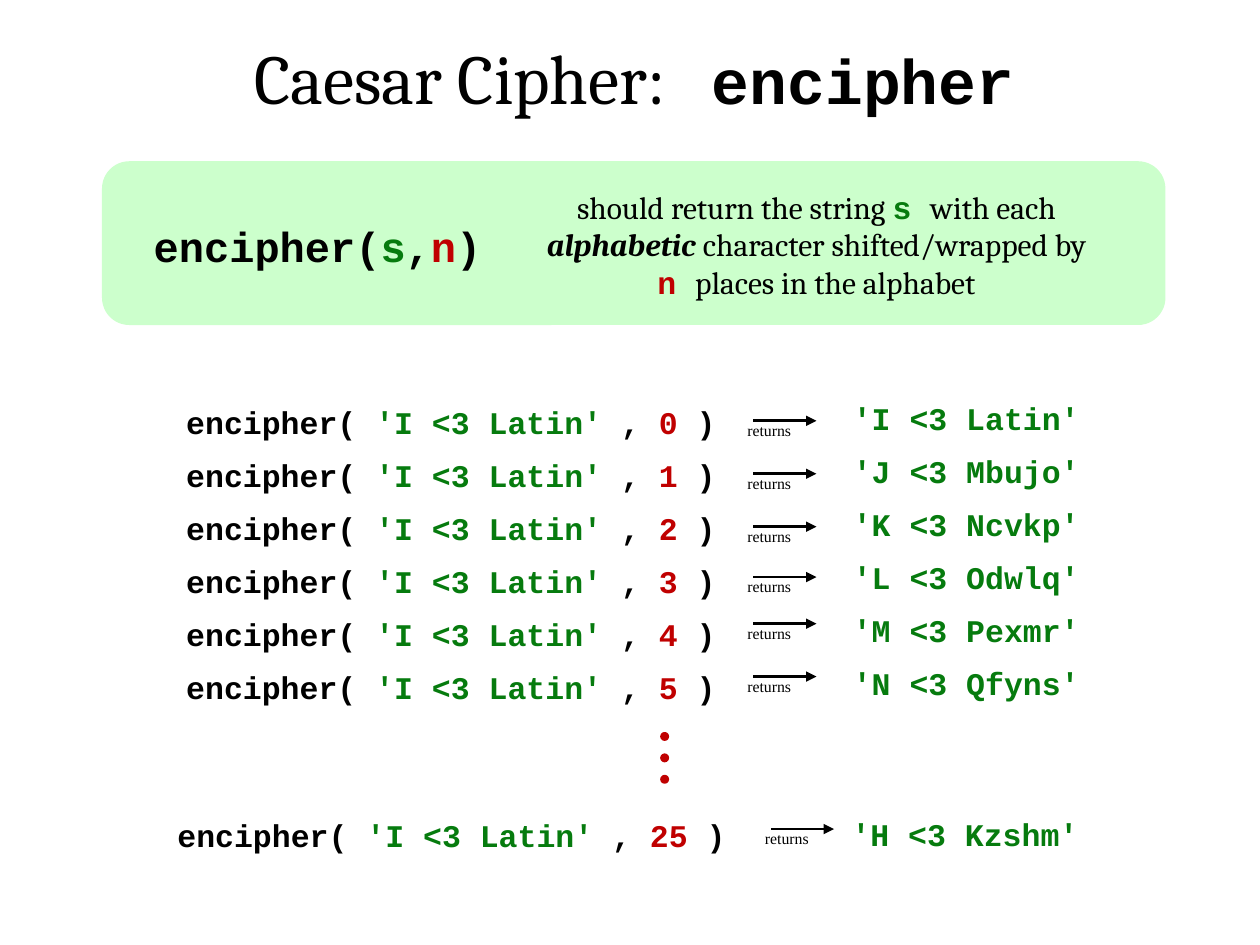
"""Build the slide that explains the Caesar cipher function encipher."""
import pptx
import pptx.dml.color
import pptx.enum.shapes
import pptx.enum.text
import pptx.oxml
import pptx.oxml.ns
import pptx.util

Inches = pptx.util.Inches
Pt = pptx.util.Pt
SHAPES = pptx.enum.shapes.MSO_SHAPE
CENTER = pptx.enum.text.PP_ALIGN.CENTER

BLACK, GREEN, RED, MINT = "000000", "067B0E", "C00000", "CCFFCC"
SERIF, MONO, ROMAN = "Cambria", "Courier New", "Times New Roman"


def color(value):
    """Return the RGB color for a hex string."""
    return pptx.dml.color.RGBColor.from_string(value)


def add_span(para, text, size=18, font=MONO, fill=BLACK, bold=False, italic=False):
    """Append one formatted span of text to a paragraph."""
    span = para.add_run()
    span.text = text
    span.font.name = font
    span.font.size = Pt(size)
    span.font.bold = bold
    span.font.italic = italic
    span.font.color.rgb = color(fill)


def add_text(shapes, box, paragraphs, align=None, spacing=None):
    """Add a text box whose paragraphs are lists of (text, format) pairs."""
    frame = shapes.add_textbox(*map(Inches, box)).text_frame
    frame.word_wrap = True
    frame.auto_size = pptx.enum.text.MSO_AUTO_SIZE.SHAPE_TO_FIT_TEXT
    for index, spans in enumerate(paragraphs):
        para = frame.add_paragraph() if index else frame.paragraphs[0]
        para.alignment = align
        para.line_spacing = spacing
        for text, style in spans:
            add_span(para, text, **style)


def add_solid(shapes, kind, box, fill):
    """Add a plain filled shape without outline or shadow."""
    shape = shapes.add_shape(kind, *map(Inches, box))
    shape.shadow.inherit = False
    shape.fill.solid()
    shape.fill.fore_color.rgb = color(fill)
    shape.line.fill.background()
    return shape


def add_title(shapes, box):
    """Add the slide title."""
    add_text(shapes, box, [[
        ("Caesar Cipher:", dict(size=40, font=SERIF)),
        (" ", dict(size=44)),
        ("encipher", dict(size=36, bold=True)),
    ]], align=CENTER)


def add_definition(shapes, box):
    """Add the rounded panel with the signature and its meaning."""
    left, top, _, _ = box
    panel = add_solid(shapes, SHAPES.ROUNDED_RECTANGLE, box, MINT)
    panel.adjustments[0] = 0.167
    code = dict(size=24, bold=True)
    add_text(shapes, (left + 0.21, top + 0.42, 3, 0.51), [[
        ("encipher(", code),
        ("s", dict(code, fill=GREEN)),
        (",", code),
        ("n", dict(code, fill=RED)),
        (")", code),
    ]], align=CENTER)
    prose = dict(font=SERIF)
    add_text(shapes, (left + 3.42, top + 0.16, 4.5, 1.01), [[
        ("should return the string ", prose),
        ("s ", dict(fill=GREEN, bold=True)),
        ("with each ", prose),
        ("alphabetic ", dict(prose, bold=True, italic=True)),
        ("character shifted/wrapped by ", prose),
        ("n ", dict(fill=RED, bold=True)),
        ("places in the alphabet", prose),
    ]], align=CENTER)


def add_call(shapes, box, shift):
    """Add one example call of encipher."""
    code = dict(bold=True)
    add_text(shapes, box, [[
        ("encipher( ", code),
        ("'I <3 Latin' ", dict(code, fill=GREEN)),
        (", ", code),
        (str(shift), dict(code, fill=RED)),
        (" )", code),
    ]])


def add_returns(shapes, box):
    """Add a group of the word returns and the arrow above it."""
    left, top, _, _ = box
    parts = shapes.add_group_shape().shapes
    start, end, level = Inches(left + 0.21), Inches(left + 0.71), Inches(top + 0.05)
    arrow = parts.add_connector(
        pptx.enum.shapes.MSO_CONNECTOR.STRAIGHT, start, level, end, level)
    arrow.line.color.rgb = color(BLACK)
    arrow.line.width = Pt(1.5)
    head = pptx.oxml.parse_xml(
        f'<a:tailEnd {pptx.oxml.ns.nsdecls("a")} type="triangle"/>')
    arrow.line._get_or_add_ln().append(head)
    arrow._element.spPr.append(
        pptx.oxml.parse_xml(f'<a:effectLst {pptx.oxml.ns.nsdecls("a")}/>'))
    add_text(parts, box, [[("returns", dict(size=9, font=ROMAN))]], align=CENTER)


def add_results(shapes, box, results, spacing=None):
    """Add returned strings, one to a line."""
    style = dict(fill=GREEN, bold=True)
    add_text(shapes, box, [[(result, style)] for result in results], spacing=spacing)


def add_dots(shapes, box):
    """Add three dots evenly spread down the box."""
    left, top, size, height = box
    for index in range(3):
        dot_top = top + index * (height - size) / 2
        dot = add_solid(shapes, SHAPES.OVAL, (left, dot_top, size, size), RED)
        dot.line.color.rgb = color(RED)
        dot.line.width = Pt(1.5)


def add_examples(shapes, box):
    """Add the first six calls, the dots and the last call."""
    left, top, _, _ = box
    label_tops = (3.29, 3.71, 4.13, 4.53, 4.9, 5.32)
    for shift, label_top in enumerate(label_tops):
        add_call(shapes, (left + 0.07, top + 0.15 + 0.42 * shift, 5, 0.4), shift)
        add_returns(shapes, (left + 4.46, label_top, 0.67, 0.25))
    add_results(shapes, (left + 5.36, top, 2.58, 2.65), (
        "'I <3 Latin'", "'J <3 Mbujo'", "'K <3 Ncvkp'",
        "'L <3 Odwlq'", "'M <3 Pexmr'", "'N <3 Qfyns'"), spacing=1.4)
    add_dots(shapes, (left + 3.94, top + 2.82, 0.05, 0.39))
    add_call(shapes, (left, top + 3.43, 5, 0.4), 25)
    add_returns(shapes, (left + 4.6, top + 3.53, 0.67, 0.25))
    add_results(shapes, (left + 5.35, top + 3.42, 2.01, 0.4), ("'H <3 Kzshm'",))


def main():
    """Build and save the deck."""
    deck = pptx.Presentation()
    deck.slide_width, deck.slide_height = Inches(10), Inches(7.5)
    page = deck.slides.add_slide(deck.slide_layouts[6])
    add_title(page.shapes, (1.08, 0.17, 7.91, 0.77))
    add_definition(page.shapes, (0.81, 1.28, 8.44, 1.3))
    add_examples(page.shapes, (1.31, 3, 7.94, 3.83))
    deck.save("out.pptx")


if __name__ == "__main__":
    main()
